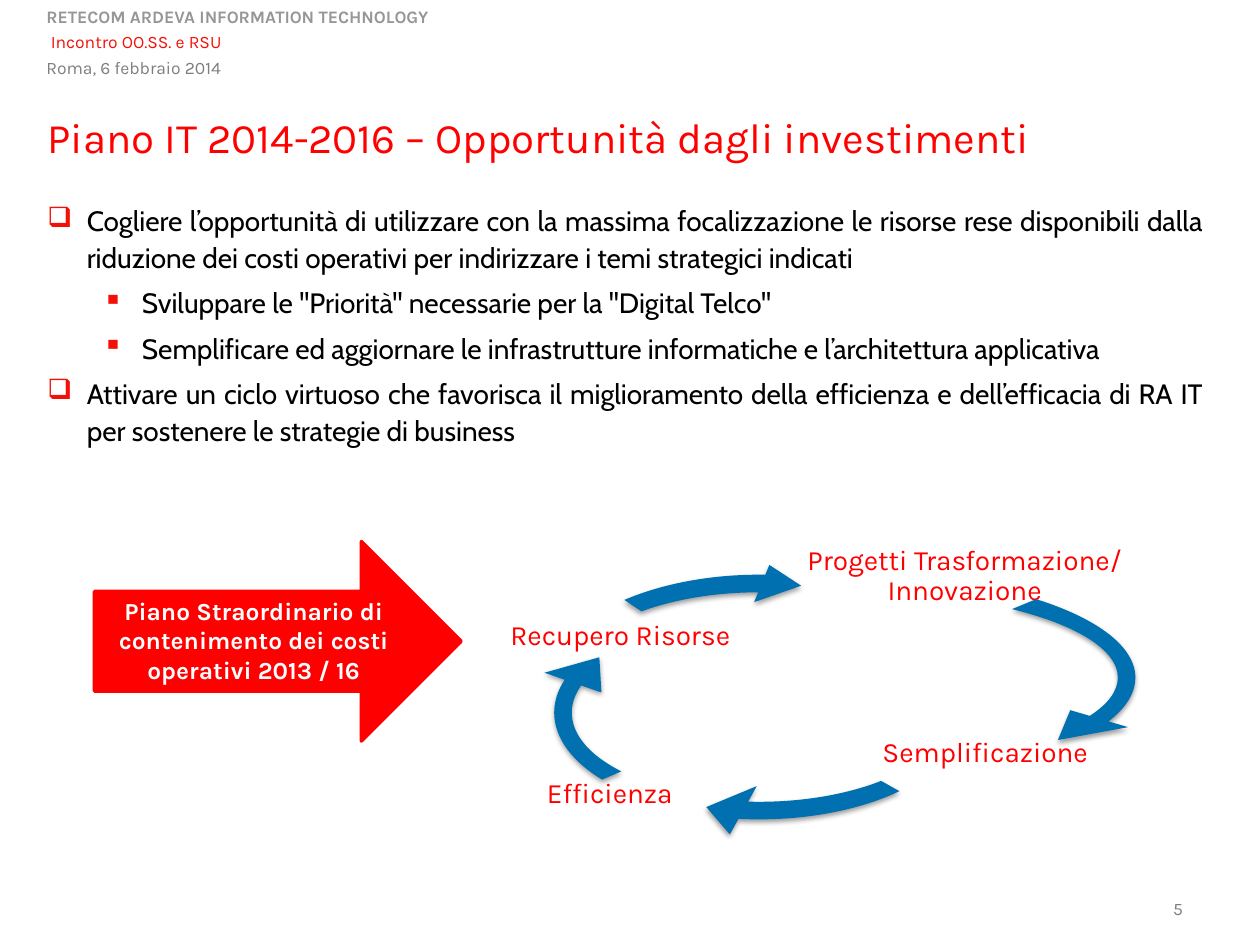
from dataclasses import dataclass

from lxml.etree import SubElement
from pptx import Presentation
from pptx.dml.color import RGBColor
from pptx.enum.shapes import MSO_SHAPE
from pptx.enum.text import MSO_ANCHOR, PP_ALIGN
from pptx.oxml.ns import qn
from pptx.util import Pt


@dataclass(frozen=True)
class Theme:
    heading: str = "Karla"
    body: str = "Cabin"
    red: str = "FF0000"
    accent: str = "F31107"
    blue: str = "0070B0"
    light_grey: str = "969696"
    grey: str = "7E7E7E"
    black: str = "000000"
    white: str = "FFFFFF"
    title_size: int = 24
    text_size: int = 16
    callout_size: int = 14
    small_size: int = 10


THEME = Theme()

TITLE = "Piano IT 2014-2016 – Opportunità dagli investimenti"
HEADER = [
    ("RETECOM ARDEVA INFORMATION TECHNOLOGY", THEME.light_grey, True, 1.0, 0),
    ("Incontro OO.SS. e RSU", THEME.accent, False, 1.2, 2.5),
    ("Roma, 6 febbraio 2014", THEME.grey, False, 1.2, 0),
]
POINTS = [
    (0, "Cogliere l’opportunità di utilizzare con la massima focalizzazione le risorse "
        "rese disponibili dalla riduzione dei costi operativi per indirizzare i temi "
        "strategici indicati"),
    (1, "Sviluppare le ''Priorità'' necessarie per la ''Digital Telco''"),
    (1, "Semplificare ed aggiornare le infrastrutture informatiche e l’architettura "
        "applicativa"),
    (0, "Attivare un ciclo virtuoso che favorisca il miglioramento della efficienza e "
        "dell’efficacia di RA IT per sostenere le strategie di business"),
]
BULLETS = [("❑", 22.5), ("▪", 54)]
HANGING = 22.5
CALLOUT = "Piano Straordinario di contenimento dei costi operativi 2013 / 16"
PAGE_NUMBER = "5"

CYCLE_LABELS = [
    ("Progetti Trasformazione/ Innovazione", (441.5, 304, 219.5, 50.5)),
    ("Semplificazione", (486, 417.5, 154, 26.5)),
    ("Efficienza", (275, 429, 147, 50.5)),
    ("Recupero Risorse", (274.5, 338.5, 160, 50.5)),
]
CYCLE_ARROWS = [
    ((304.5, 315.5, 356.5, 143.5), (0.07, 4.3, 5.5, 202.63, 0.12)),
    ((304.5, 335.5, 258.5, 143.5), (0.07, 12.01, 59.5, 17.53, 0.11)),
    ((304.5, 335.5, 258.5, 143.5), (0.07, 5.97, 113.5, 94.13, 0.12)),
    ((304.5, 322, 258.5, 143.5), (0.07, 12.42, 162.89, 128.07, 0.08)),
]


def color(value):
    return RGBColor.from_string(value)


def place(points):
    return [Pt(value) for value in points]


def write(para, text, size, tint, font=THEME.heading, bold=False,
          align=PP_ALIGN.LEFT, spacing=1.0):
    para.alignment = align
    para.line_spacing = spacing
    span = para.add_run()
    span.text = text
    span.font.name = font
    span.font.size = Pt(size)
    span.font.bold = bold
    span.font.color.rgb = color(tint)


def add_box(page, frame, anchor=MSO_ANCHOR.TOP, inset=None):
    text = page.shapes.add_textbox(*place(frame)).text_frame
    text.word_wrap = True
    text.vertical_anchor = anchor
    if inset is not None:
        text.margin_left = text.margin_right = Pt(inset)
        text.margin_top = text.margin_bottom = Pt(inset)
    return text


def paragraphs(text, items):
    for index, item in enumerate(items):
        yield index, text.paragraphs[0] if index == 0 else text.add_paragraph(), item


def add_bullet(para, level):
    mark, margin = BULLETS[level]
    para.level = level
    properties = para._p.get_or_add_pPr()
    properties.set("marL", str(Pt(margin)))
    properties.set("indent", str(-Pt(HANGING)))
    tint = SubElement(properties, qn("a:buClr"))
    SubElement(tint, qn("a:srgbClr"), val=THEME.accent)
    SubElement(properties, qn("a:buChar"), char=mark)


def add_solid(page, kind, frame, tint):
    shape = page.shapes.add_shape(kind, *place(frame))
    shape.shadow.inherit = False
    shape.fill.solid()
    shape.fill.fore_color.rgb = color(tint)
    return shape


def add_soft_shadow(shape):
    effects = shape._element.spPr.find(qn("a:effectLst"))
    shadow = SubElement(effects, qn("a:outerShdw"), blurRad=str(Pt(3.1)),
                        dist=str(Pt(1.6)), dir="5400000", rotWithShape="0")
    tint = SubElement(shadow, qn("a:srgbClr"), val=THEME.black)
    SubElement(tint, qn("a:alpha"), val="38000")


def add_header(page):
    text = add_box(page, (19.5, 0, 360, 48))
    for _, para, (line, tint, bold, spacing, indent) in paragraphs(text, HEADER):
        para._p.get_or_add_pPr().set("marL", str(Pt(indent)))
        write(para, line, THEME.small_size, tint, bold=bold, spacing=spacing)


def add_title(page):
    title = page.shapes.title
    title.left, title.top, title.width, title.height = place((20, 66, 692, 30))
    title.text_frame.vertical_anchor = MSO_ANCHOR.MIDDLE
    write(title.text_frame.paragraphs[0], TITLE, THEME.title_size, THEME.red, spacing=0.8)


def add_points(page):
    text = add_box(page, (20, 111, 675, 382))
    for index, para, (level, line) in paragraphs(text, POINTS):
        add_bullet(para, level)
        para.space_before = Pt(THEME.text_size * 0.2 if index else 0)
        para.space_after = Pt(THEME.text_size * 0.1)
        write(para, line, THEME.text_size, THEME.black, font=THEME.body,
              align=PP_ALIGN.JUSTIFY, spacing=1.1)


def add_callout(page):
    arrow = add_solid(page, MSO_SHAPE.RIGHT_ARROW, (54, 309.5, 209.5, 114), THEME.red)
    arrow.line.color.rgb = color(THEME.red)
    arrow.line.width = Pt(2)
    text = add_box(page, (43, 337, 204, 58.5))
    write(text.paragraphs[0], CALLOUT, THEME.callout_size, THEME.white, bold=True,
          align=PP_ALIGN.CENTER)


def add_cycle(page):
    for label, frame in CYCLE_LABELS:
        text = add_box(page, frame, MSO_ANCHOR.MIDDLE, inset=1.5)
        write(text.paragraphs[0], label, THEME.text_size, THEME.red,
              align=PP_ALIGN.CENTER, spacing=0.9)
    for frame, adjustments in CYCLE_ARROWS:
        arrow = add_solid(page, MSO_SHAPE.CIRCULAR_ARROW, frame, THEME.blue)
        arrow.line.fill.background()
        for index, value in enumerate(adjustments):
            arrow.adjustments[index] = value
        add_soft_shadow(arrow)


def add_page_number(page):
    text = add_box(page, (604, 502.5, 79, 26), MSO_ANCHOR.BOTTOM)
    write(text.paragraphs[0], PAGE_NUMBER, THEME.small_size, THEME.grey,
          align=PP_ALIGN.RIGHT)


def main():
    deck = Presentation()
    deck.slide_width, deck.slide_height = Pt(720), Pt(540)
    page = deck.slides.add_slide(deck.slide_layouts.get_by_name("Title Only"))
    for build in (add_header, add_title, add_points, add_callout, add_cycle,
                  add_page_number):
        build(page)
    deck.save("out.pptx")


if __name__ == "__main__":
    main()
